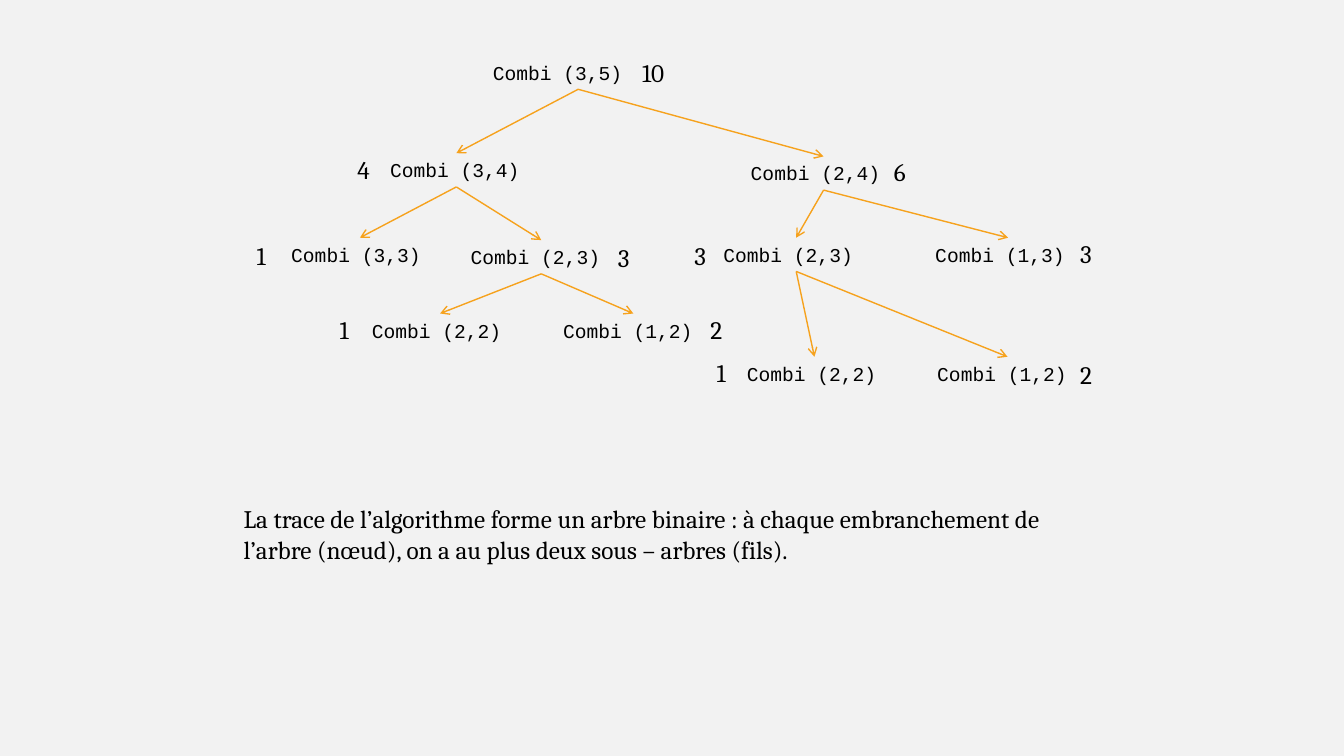
from dataclasses import dataclass

from lxml.etree import SubElement
from pptx import Presentation
from pptx.dml.color import RGBColor
from pptx.enum.shapes import MSO_CONNECTOR
from pptx.enum.text import MSO_AUTO_SIZE
from pptx.oxml.ns import qn
from pptx.util import Cm, Pt

BACKGROUND, INK, BRANCH = "F2F2F2", "000000", "F6A21D"
CALL_HEIGHT = 0.85
RESULT_WIDTH, RESULT_HEIGHT = 1.63, 1.04


@dataclass
class Call:
    """One recursive call; lengths in cm."""
    arguments: str
    left: float
    top: float
    width: float
    result: str
    result_left: float
    result_top: float
    children: tuple = ()

    @property
    def center(self):
        return self.left + self.width / 2


# Trace of the recursion, from the root down
TRACE = Call("3,5", 12.17, 1.4, 4.8, "10", 15.93, 1.32, (
    Call("3,4", 9.58, 3.86, 3.84, "4", 8.76, 3.76, (
        Call("3,3", 7.09, 5.99, 3.96, "1", 6.22, 5.92),
        Call("2,3", 11.61, 6.05, 4.06, "3", 15.32, 5.99, (
            Call("2,2", 9.12, 7.9, 3.94, "1", 8.31, 7.8),
            Call("1,2", 13.94, 7.9, 4.04, "2", 17.65, 7.8),
        )),
    )),
    Call("2,4", 18.67, 3.94, 4.17, "6", 22.28, 3.81, (
        Call("2,3", 17.98, 5.99, 4.17, "3", 17.25, 5.92, (
            Call("2,2", 18.57, 8.99, 3.91, "1", 17.81, 8.89),
            Call("1,2", 23.37, 8.99, 4.04, "2", 26.97, 8.92),
        )),
        Call("1,3", 23.32, 5.99, 4.17, "3", 26.97, 5.87),
    )),
))


def color(hex_code):
    return RGBColor.from_string(hex_code)


def add_text(slide, text, left, top, width, height, font="Cambria", size=18):
    frame = slide.shapes.add_textbox(
        Cm(left), Cm(top), Cm(width), Cm(height)).text_frame
    frame.word_wrap = True
    frame.auto_size = MSO_AUTO_SIZE.SHAPE_TO_FIT_TEXT
    frame.text = text
    run_font = frame.paragraphs[0].runs[0].font
    run_font.name = font
    run_font.size = Pt(size)
    run_font.color.rgb = color(INK)


def add_branch(slide, parent, child):
    branch = slide.shapes.add_connector(
        MSO_CONNECTOR.STRAIGHT,
        Cm(parent.center), Cm(parent.top + CALL_HEIGHT),
        Cm(child.center), Cm(child.top))
    branch.line.color.rgb = color(BRANCH)
    branch.line.width = Pt(1)
    # Open arrowhead at the child, no shadow
    SubElement(branch.line._get_or_add_ln(), qn("a:tailEnd"), type="arrow")
    SubElement(branch._element.spPr, qn("a:effectLst"))


def add_call(slide, call):
    add_text(slide, f"Combi ({call.arguments})", call.left, call.top,
             call.width, CALL_HEIGHT, "Courier New", 14)
    add_text(slide, call.result, call.result_left, call.result_top,
             RESULT_WIDTH, RESULT_HEIGHT)
    for child in call.children:
        add_branch(slide, call, child)
        add_call(slide, child)


def main():
    deck = Presentation()
    deck.slide_width, deck.slide_height = Cm(33.87), Cm(19.05)
    slide = deck.slides.add_slide(deck.slide_layouts[6])
    slide.background.fill.solid()
    slide.background.fill.fore_color.rgb = color(BACKGROUND)

    # Tree of calls
    add_call(slide, TRACE)

    # Explanation
    add_text(slide, "La trace de l’algorithme forme un arbre binaire : à chaque "
             "embranchement de l’arbre (nœud), on a au plus deux sous – arbres "
             "(fils).", 5.89, 12.57, 21.31, 1.8)

    deck.save("out.pptx")


if __name__ == "__main__":
    main()
